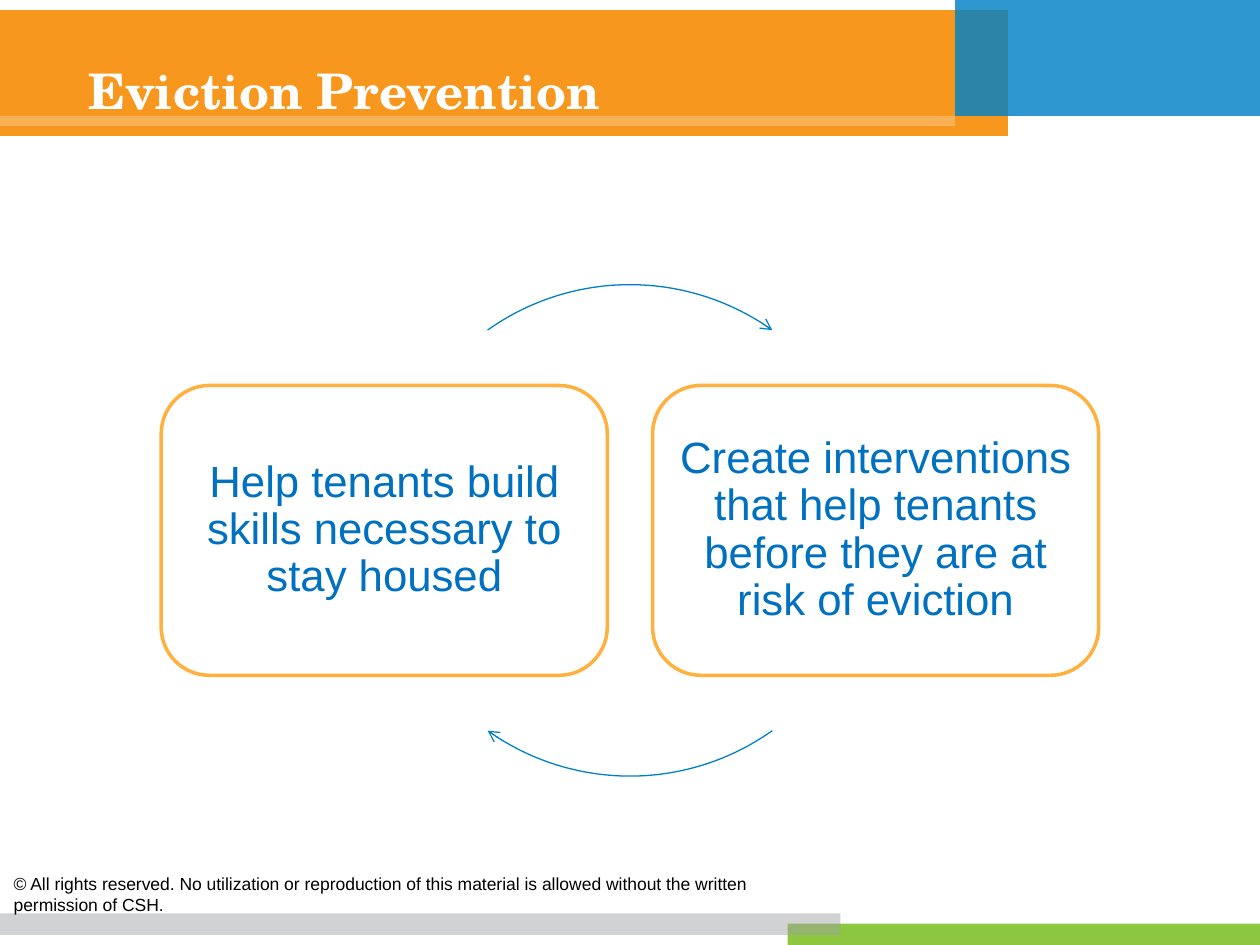
"""Build the Eviction Prevention slide: two linked steps in a cycle."""
from dataclasses import dataclass

from lxml import etree
from pptx import Presentation
from pptx import util as u
from pptx.dml.color import RGBColor
from pptx.enum import shapes, text
from pptx.oxml import ns


@dataclass(frozen=True)
class Theme:
    orange: str = "F8971D"
    blue: str = "0081C6"
    green: str = "8DC63F"
    gray: str = "9FA1A4"
    white: str = "FFFFFF"
    black: str = "000000"
    step_outline: str = "FFB13F"
    step_text: str = "0070C0"
    heading_font: str = "TeX Gyre Schola"
    body_font: str = "Arial"
    heading_size: float = 28
    step_size: float = 25
    notice_size: float = 10


def write(frame, wording, *, font, size, color, bold=False, align=text.PP_ALIGN.LEFT,
          anchor=text.MSO_ANCHOR.TOP, spacing=1.0, inset_y=0.1):
    frame.word_wrap = True
    frame.vertical_anchor = anchor
    frame.margin_left = frame.margin_right = u.Inches(0.1)
    frame.margin_top = frame.margin_bottom = u.Inches(inset_y)
    paragraph = frame.paragraphs[0]
    paragraph.alignment = align
    paragraph.line_spacing = spacing
    run = paragraph.add_run()
    run.text = wording
    run.font.name = font
    run.font.size = u.Pt(size)
    run.font.bold = bold
    run.font.color.rgb = RGBColor.from_string(color)


class SlideBuilder:
    def __init__(self, slide, theme):
        self.slide = slide
        self.theme = theme

    def shape(self, kind, box, fill=None, line=None, width=1):
        shape = self.slide.shapes.add_shape(kind, *map(u.Inches, box))
        shape.shadow.inherit = False
        if fill:
            shape.fill.solid()
            shape.fill.fore_color.rgb = RGBColor.from_string(fill)
        else:
            shape.fill.background()
        if line:
            shape.line.color.rgb = RGBColor.from_string(line)
            shape.line.width = u.Pt(width)
        else:
            shape.line.fill.background()
        return shape

    def band(self, box, color, opacity=100):
        band = self.shape(shapes.MSO_SHAPE.RECTANGLE, box, fill=color)
        if opacity < 100:
            tint = band.element.find(".//" + ns.qn("a:srgbClr"))
            etree.SubElement(tint, ns.qn("a:alpha"), val=str(opacity * 1000))

    def label(self, box, wording, **style):
        label = self.slide.shapes.add_textbox(*map(u.Inches, box))
        write(label.text_frame, wording, **style)

    def step(self, box, wording):
        step = self.shape(shapes.MSO_SHAPE.ROUNDED_RECTANGLE, box,
                          self.theme.white, self.theme.step_outline, 2)
        write(step.text_frame, wording, font=self.theme.body_font,
              size=self.theme.step_size, color=self.theme.step_text,
              align=text.PP_ALIGN.CENTER, anchor=text.MSO_ANCHOR.MIDDLE, spacing=0.9)

    def cycle_arrow(self, box, middle, half_sweep=35.4):
        """Draw a clockwise arc centred on an angle in degrees."""
        arc = self.shape(shapes.MSO_SHAPE.ARC, box, line=self.theme.blue, width=0.75)
        for index, angle in enumerate((middle - half_sweep, middle + half_sweep)):
            arc.adjustments[index] = angle * 60000 / 100000
        outline = arc.element.find(".//" + ns.qn("a:ln"))
        etree.SubElement(outline, ns.qn("a:tailEnd"), type="arrow")


def main():
    deck = Presentation()
    deck.slide_width, deck.slide_height = u.Inches(10), u.Inches(7.5)
    theme = Theme()
    builder = SlideBuilder(deck.slides.add_slide(deck.slide_layouts[6]), theme)

    for box, color, opacity in (
        ((0, 0.08, 8, 1), theme.orange, 100),
        ((7.58, 0, 2.42, 0.92), theme.blue, 82),
        ((6.25, 7.33, 3.75, 0.17), theme.green, 100),
        ((0, 7.25, 6.67, 0.17), theme.gray, 48),
        ((0, 0.92, 7.58, 0.08), theme.white, 25),
    ):
        builder.band(box, color, opacity)

    builder.label((0.01, 6.88, 6.66, 0.27),
                  "© All rights reserved. No utilization or reproduction of this material "
                  "is allowed without the written permission of CSH.",
                  font=theme.body_font, size=theme.notice_size, color=theme.black,
                  inset_y=0.05)
    builder.label((0.6, 0.42, 6.58, 0.58), "Eviction Prevention",
                  font=theme.heading_font, size=theme.heading_size, color=theme.white,
                  bold=True, anchor=text.MSO_ANCHOR.MIDDLE)

    steps = (
        ("Help tenants build skills necessary to stay housed", 270),
        ("Create interventions that help tenants before they are at risk of eviction", 90),
    )
    for index, (wording, arrow_angle) in enumerate(steps):
        builder.step((1.28 + index * 3.9, 3.06, 3.54, 2.3), wording)
        builder.cycle_arrow((3.05, 2.26, 3.9, 3.9), arrow_angle)

    deck.save("out.pptx")


if __name__ == "__main__":
    main()
